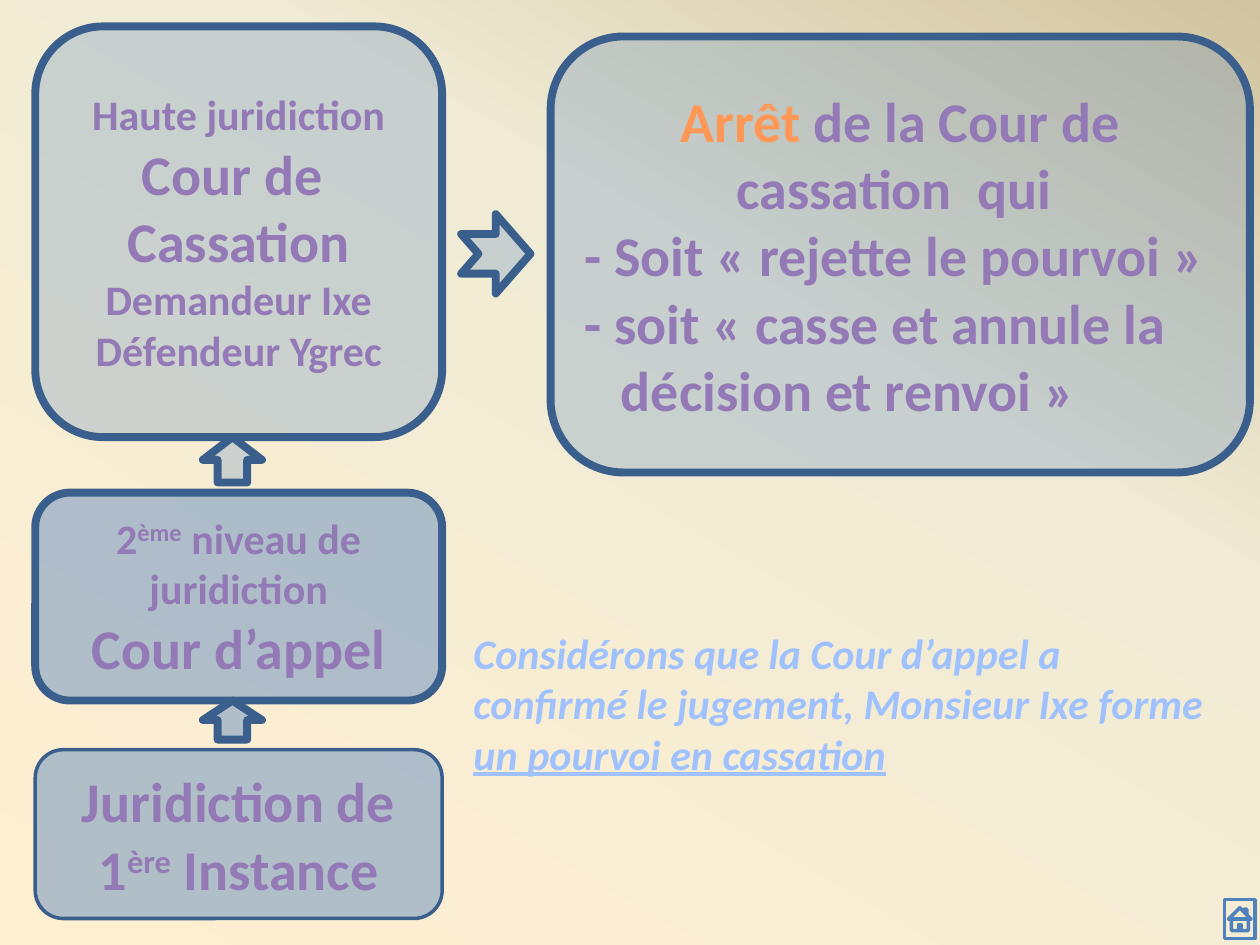
from copy import deepcopy

from lxml import etree
from pptx import Presentation
from pptx.dml.color import RGBColor
from pptx.enum.shapes import MSO_SHAPE
from pptx.enum.text import MSO_ANCHOR, PP_ALIGN
from pptx.oxml.ns import qn
from pptx.util import Inches, Pt

ROUNDED = MSO_SHAPE.ROUNDED_RECTANGLE
UP_ARROW = MSO_SHAPE.UP_ARROW
NOTCHED_ARROW = MSO_SHAPE.NOTCHED_RIGHT_ARROW
HOME_BUTTON = MSO_SHAPE.ACTION_BUTTON_HOME
CENTER, LEFT = PP_ALIGN.CENTER, PP_ALIGN.LEFT

COLORS = {
    "blue": "4F81BD", "border": "3A5F8C", "purple": "9379B5",
    "orange": "FF9856", "sky": "A0C1FF",
}
BACKGROUND = [(0, "FFEFD1"), (0.65, "F0EBD5"), (1, "D1C39F")]
FONT = "Calibri"
SMALL, LARGE = 24, 32

# Content: each paragraph is (runs, format); each run is (text, format)
CASSATION = [
    ([("Haute juridiction", {})], {"size": SMALL}),
    ([("Cour de ", {})], {}),
    ([("Cassation", {})], {}),
    ([("Demandeur Ixe", {})], {"size": SMALL}),
    ([("Défendeur Ygrec", {})], {"size": SMALL}),
]
APPEL = [
    ([("2", {}), ("ème", {"raised": True}), (" niveau de juridiction", {})], {"size": SMALL}),
    ([("Cour d’appel", {})], {}),
]
INSTANCE = [
    ([("Juridiction de\v1", {}), ("ère", {"raised": True}), (" Instance", {})], {}),
]
ARRET = [
    ([("Arrêt ", {"color": "orange"}), ("de la Cour de cassation  qui ", {})], {}),
    ([("- Soit « rejette le pourvoi »", {})], {"align": LEFT}),
    ([("- soit « casse et annule la décision et renvoi »", {})],
     {"align": LEFT, "hanging": 0.29}),
]
POURVOI = [
    ([("Considérons que la Cour d’appel a confirmé le jugement, Monsieur Ixe forme ", {}),
      ("un pourvoi en cassation", {"underline": True})],
     {"size": SMALL, "align": LEFT, "color": "sky", "italic": True}),
]

# Courts from top to bottom: text, height, opacity, border, height of arrow below
COURTS = [
    (CASSATION, 3.26, 25, 4.5, 0.36),
    (APPEL, 1.65, 44, 4.5, 0.31),
    (INSTANCE, 1.34, 44, 2, 0),
]
COLUMN_LEFT, COLUMN_TOP, COLUMN_WIDTH = 0.28, 0.21, 3.23
ARROW_LEFT, ARROW_WIDTH, ARROW_GAP = 1.61, 0.47, 0.08


def rgb(name):
    return RGBColor.from_string(COLORS[name])


def add_run(paragraph, text, size=LARGE, color="purple", italic=False,
            underline=False, raised=False):
    first, *rest = text.split("\v")
    for index, part in enumerate([first] + rest):
        if index:
            paragraph.add_line_break()
        run = paragraph.add_run()
        run.text = part
        font = run.font
        font.name, font.size, font.bold = FONT, Pt(size), True
        font.italic, font.underline = italic, underline
        font.color.rgb = rgb(color)
        if raised:
            font._element.set("baseline", "30000")


def write(shape, paragraphs):
    frame = shape.text_frame
    frame.word_wrap = True
    for index, (runs, options) in enumerate(paragraphs):
        paragraph = frame.paragraphs[0] if index == 0 else frame.add_paragraph()
        style = dict(options)
        paragraph.alignment = style.pop("align", CENTER)
        hanging = style.pop("hanging", 0)
        if hanging:
            properties = paragraph._p.get_or_add_pPr()
            properties.set("marL", str(Inches(hanging)))
            properties.set("indent", str(-Inches(hanging)))
        for text, changes in runs:
            add_run(paragraph, text, **{**style, **changes})


def add_figure(slide, kind, box, opacity=25, border=4.5, line="border", paragraphs=()):
    shape = slide.shapes.add_shape(kind, *map(Inches, box))
    shape.shadow.inherit = False
    shape.line.color.rgb = rgb(line)
    shape.line.width = Pt(border)
    if opacity:
        shape.fill.solid()
        shape.fill.fore_color.rgb = rgb("blue")
        color = shape._element.spPr.find(qn("a:solidFill"))[0]
        etree.SubElement(color, qn("a:alpha")).set("val", str(opacity * 1000))
    else:
        shape.fill.background()
    if paragraphs:
        shape.text_frame.vertical_anchor = MSO_ANCHOR.MIDDLE
        write(shape, paragraphs)


def paint_background(slide):
    fill = slide.background.fill
    fill.gradient()
    fill.gradient_angle = 60
    stops = slide._element.find(".//" + qn("a:gsLst"))
    stops.append(deepcopy(stops[-1]))
    for stop, (position, color) in zip(fill.gradient_stops, BACKGROUND):
        stop.position = position
        stop.color.rgb = RGBColor.from_string(color)


def main():
    deck = Presentation()
    deck.slide_width, deck.slide_height = Inches(10), Inches(7.5)
    slide = deck.slides.add_slide(deck.slide_layouts[6])
    paint_background(slide)

    # Home button
    add_figure(slide, HOME_BUTTON, (9.72, 7.14, 0.24, 0.31), opacity=0, border=2, line="blue")

    # Ruling of the highest court
    add_figure(slide, NOTCHED_ARROW, (3.66, 1.7, 0.55, 0.63))
    add_figure(slide, ROUNDED, (4.37, 0.29, 5.55, 3.46), paragraphs=ARRET)

    # Remark on the appeal
    remark = slide.shapes.add_textbox(*map(Inches, (3.66, 4.93, 6.06, 1.31)))
    write(remark, POURVOI)

    # Column of courts, each arrow touching the court above it
    top = COLUMN_TOP
    for paragraphs, height, opacity, border, arrow_height in COURTS:
        add_figure(slide, ROUNDED, (COLUMN_LEFT, top, COLUMN_WIDTH, height),
                   opacity, border, paragraphs=paragraphs)
        top += height
        if arrow_height:
            add_figure(slide, UP_ARROW, (ARROW_LEFT, top, ARROW_WIDTH, arrow_height), opacity)
            top += arrow_height + ARROW_GAP

    deck.save("out.pptx")


if __name__ == "__main__":
    main()
